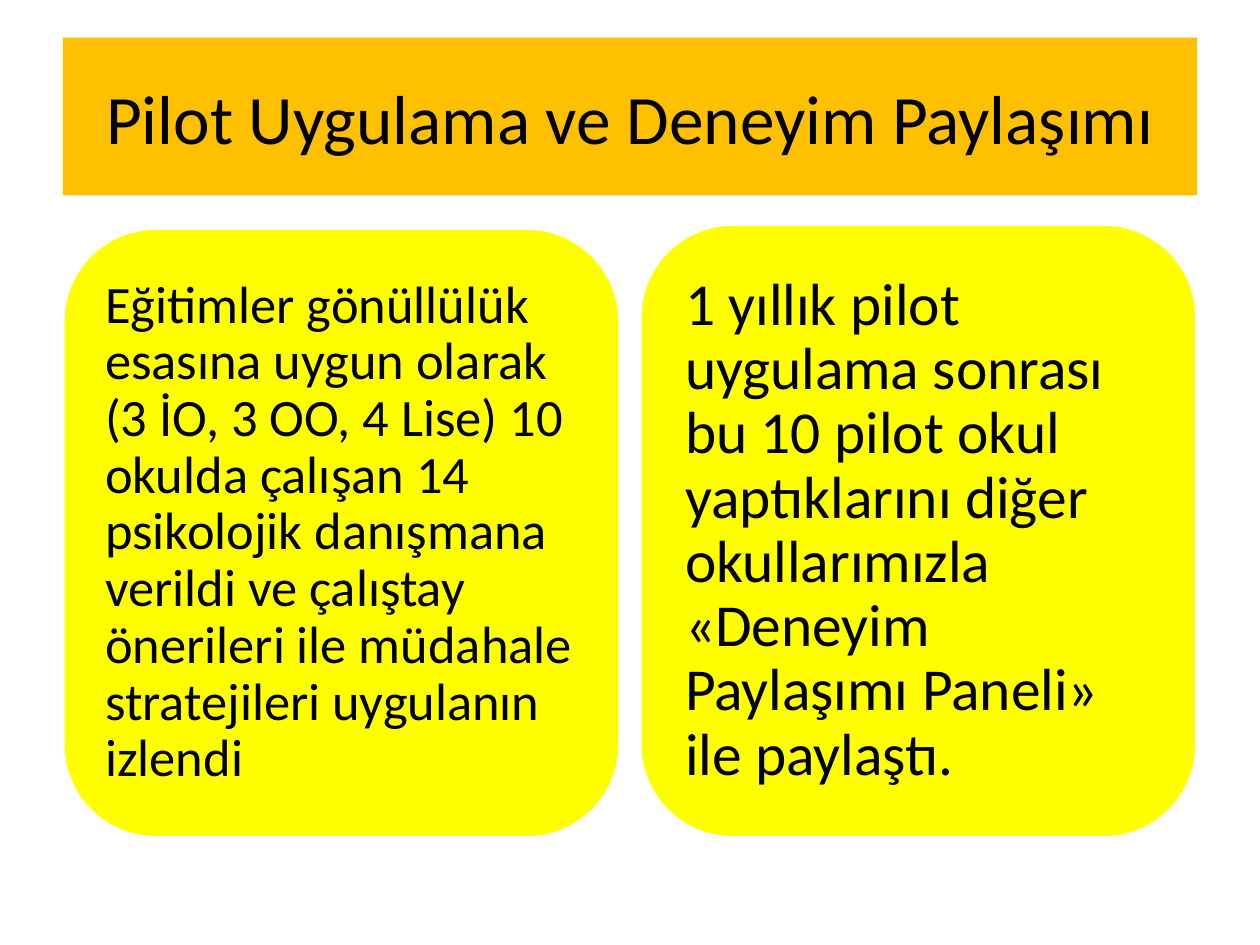
from dataclasses import dataclass
from typing import Any

from pptx import Presentation
from pptx.dml.color import RGBColor
from pptx.enum.shapes import MSO_SHAPE
from pptx.enum.text import MSO_ANCHOR, PP_ALIGN
from pptx.util import Cm, Pt

RECT, ROUND = MSO_SHAPE.RECTANGLE, MSO_SHAPE.ROUNDED_RECTANGLE
MIDDLE = MSO_ANCHOR.MIDDLE
LEFT, CENTER = PP_ALIGN.LEFT, PP_ALIGN.CENTER

COLORS = {"title": "FFC000", "card": "FFFF00", "outline": "FFFFFF", "text": "000000"}
FONT = "Calibri"
MARGIN = 1.27
CARD_WIDTH = 11.23
TEXT_INSET = 0.55
SLIDE_WIDTH = 25.4


@dataclass
class Card:
    left: float
    top: float
    height: float
    padding: float
    size: float
    text: str


CARDS = [
    Card(MARGIN, 4.6, 12.29, 0.3, 30,
         "Eğitimler gönüllülük esasına uygun olarak (3 İO, 3 OO, 4 Lise) 10 okulda "
         "çalışan 14 psikolojik danışmana verildi ve çalıştay önerileri ile müdahale "
         "stratejileri uygulanın izlendi"),
    Card(SLIDE_WIDTH - MARGIN - CARD_WIDTH, 4.52, 12.37, 0.36, 34,
         "1 yıllık pilot uygulama sonrası bu 10 pilot okul yaptıklarını diğer "
         "okullarımızla «Deneyim Paylaşımı Paneli» ile paylaştı."),
]


def rgb(name: str) -> RGBColor:
    return RGBColor.from_string(COLORS[name])


def set_attrs(obj: Any, values: dict[str, Any]) -> None:
    for name, value in values.items():
        setattr(obj, name, value)


def add_box(shapes: Any, kind: Any, box: tuple[float, ...], fill: str) -> Any:
    sp = shapes.add_shape(kind, *map(Cm, box))
    sp.shadow.inherit = False
    sp.fill.solid()
    sp.fill.fore_color.rgb = rgb(fill)
    sp.line.fill.background()
    return sp


def write(sp: Any, text: str, size: float, align: Any, spacing: float, padding: float) -> None:
    tf = sp.text_frame
    sides = ("left", "right", "top", "bottom")
    set_attrs(tf, {"word_wrap": True, "vertical_anchor": MIDDLE}
              | {f"margin_{side}": Cm(padding) for side in sides})
    p = tf.paragraphs[0]
    set_attrs(p, {"alignment": align, "line_spacing": spacing})
    r = p.add_run()
    r.text = text
    set_attrs(r.font, {"name": FONT, "size": Pt(size)})
    r.font.color.rgb = rgb("text")


def add_card(s: Any, card: Card) -> None:
    group = s.shapes.add_group_shape()
    sp = add_box(group.shapes, ROUND, (card.left, card.top, CARD_WIDTH, card.height), "card")
    sp.line.color.rgb = rgb("outline")
    sp.line.width = Pt(2)
    label = group.shapes.add_textbox(
        Cm(card.left + TEXT_INSET), Cm(card.top + TEXT_INSET),
        Cm(CARD_WIDTH - 2 * TEXT_INSET), Cm(card.height - 2 * TEXT_INSET))
    write(label, card.text, card.size, LEFT, 0.9, card.padding)


def main() -> None:
    prs = Presentation()
    set_attrs(prs, {"slide_width": Cm(SLIDE_WIDTH), "slide_height": Cm(19.05)})
    s = prs.slides.add_slide(prs.slide_layouts[6])
    title = add_box(s.shapes, RECT, (MARGIN, 0.76, SLIDE_WIDTH - 2 * MARGIN, 3.18), "title")
    write(title, "Pilot Uygulama ve Deneyim Paylaşımı", 39.6, CENTER, 1.0, 0.2)
    for card in CARDS:
        add_card(s, card)
    prs.save("out.pptx")


if __name__ == "__main__":
    main()
